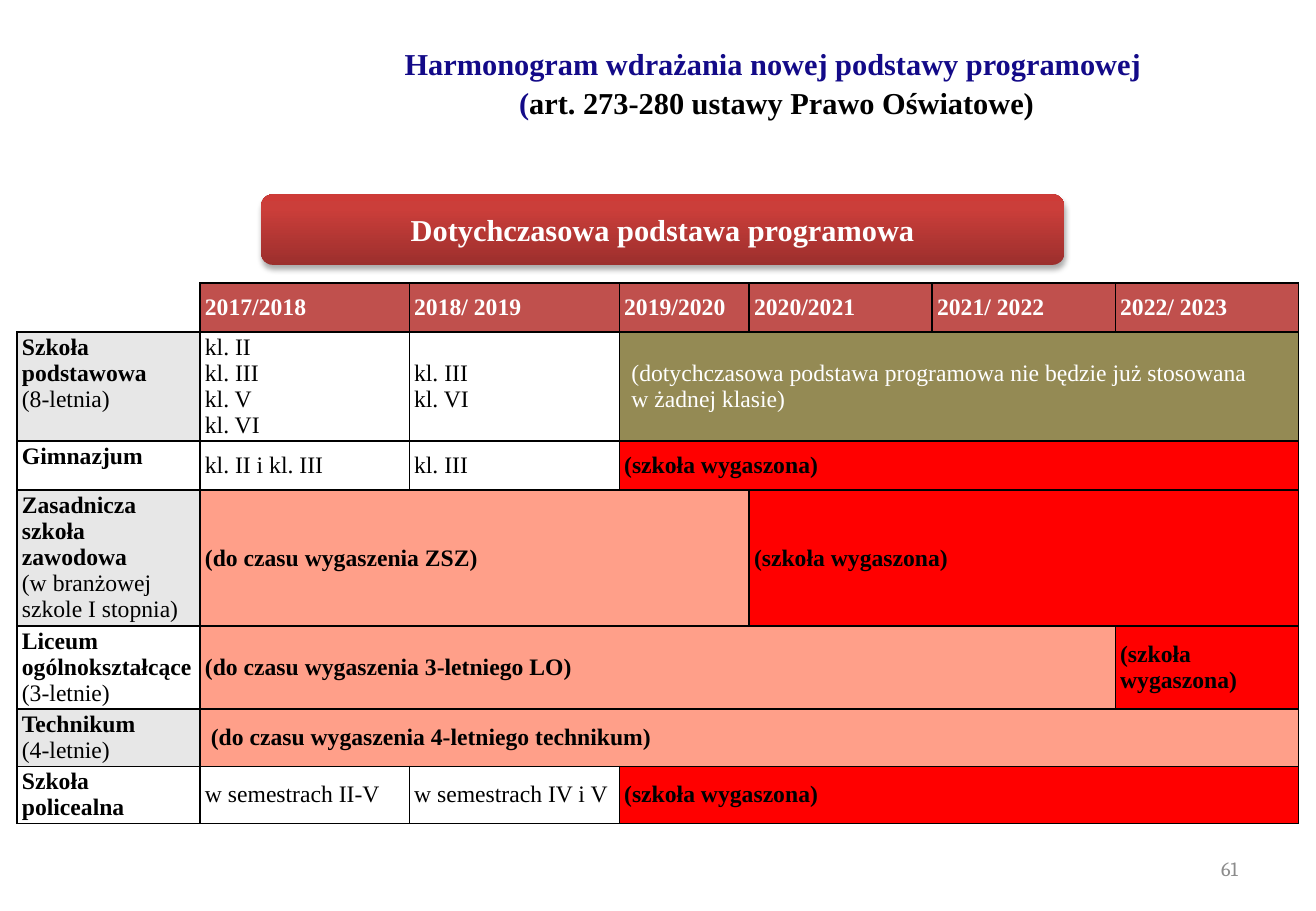
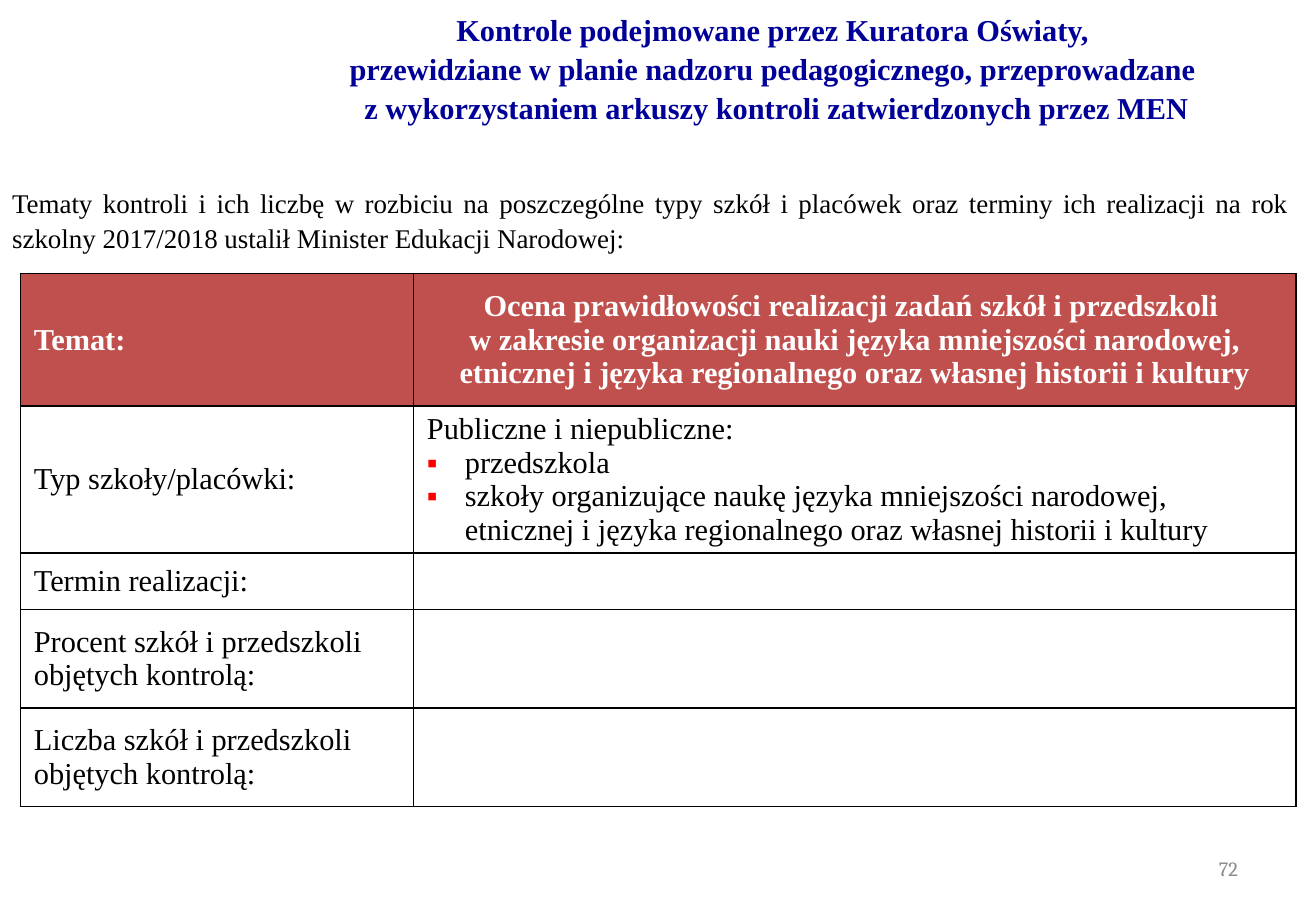
from copy import deepcopy
from dataclasses import dataclass

from lxml.etree import SubElement
from pptx import Presentation
from pptx.dml.color import RGBColor
from pptx.enum.shapes import MSO_SHAPE
from pptx.enum.text import MSO_ANCHOR, MSO_AUTO_SIZE, PP_ALIGN
from pptx.oxml.ns import qn
from pptx.util import Pt

# Shared palette and fonts
SERIF, NUMBER_FONT = "Times New Roman", "Cambria"
BLACK, WHITE, GREY = "000000", "FFFFFF", "8C8C8C"
HEADER, LABEL, OLIVE = "C0504D", "E7E7E7", "948A54"
CLOSED, PHASING_OUT = "FF0000", "FF9F89"


def rgb(value):
    return RGBColor.from_string(value)


def add_xml(parent, tag, **attributes):
    return SubElement(parent, qn(tag), attributes)


@dataclass
class Cell:
    """One table cell; lines holds (text, bold) pairs, one per paragraph."""
    lines: tuple = ()
    fill: str = WHITE
    span: int = 1
    color: str = BLACK
    anchor: MSO_ANCHOR = MSO_ANCHOR.MIDDLE
    align: PP_ALIGN = PP_ALIGN.LEFT
    left: float = 0
    bullets_from: int = 99
    borders: str = "LRTB"


def plain(*texts, **options):
    return Cell(tuple((text, False) for text in texts), **options)


def strong(text, fill=WHITE, span=1, **options):
    return Cell(((text, True),), fill, span, **options)


def header(text, **options):
    return strong(text, HEADER, color=WHITE, **options)


def school(name, note=None, fill=WHITE):
    lines = ((name, True),) + (((note, False),) if note else ())
    return Cell(lines, fill, anchor=MSO_ANCHOR.TOP)


def closed(span=1):
    return strong("(szkoła wygaszona)", CLOSED, span)


class Deck:
    def __init__(self, width, height):
        self.prs = Presentation()
        self.prs.slide_width, self.prs.slide_height = Pt(width), Pt(height)
        self.slide = None

    def new_slide(self, layout, number):
        self.slide = self.prs.slides.add_slide(self.prs.slide_layouts[layout])
        self.page_number(number)

    def add_text(self, paragraph, text, size, color=BLACK, bold=False, font=SERIF):
        """Add text run by run, with a line break at each newline."""
        for index, part in enumerate(text.split("\n")):
            if index:
                paragraph.add_line_break()
                paragraph._p[-1].append(deepcopy(run._r.rPr))
            run = paragraph.add_run()
            run.text = part
            run.font.name, run.font.size, run.font.bold = font, Pt(size), bold
            run.font.color.rgb = rgb(color)

    def place(self, shape, left, top, width, height):
        shape.left, shape.top = Pt(left), Pt(top)
        shape.width, shape.height = Pt(width), Pt(height)
        frame = shape.text_frame
        frame.word_wrap = True
        frame.auto_size = MSO_AUTO_SIZE.NONE
        return frame

    def page_number(self, number):
        box = self.slide.shapes.add_textbox(0, 0, 0, 0)
        frame = self.place(box, 558.7, 500.4, 182.2, 28.8)
        frame.vertical_anchor = MSO_ANCHOR.MIDDLE
        paragraph = frame.paragraphs[0]
        paragraph.alignment = PP_ALIGN.RIGHT
        self.add_text(paragraph, number, 12, GREY, font=NUMBER_FONT)

    def title(self, runs, left, top, width):
        frame = self.place(self.slide.shapes.title, left, top, width, 73.4)
        frame.vertical_anchor = MSO_ANCHOR.MIDDLE
        paragraph = frame.paragraphs[0]
        paragraph.alignment = PP_ALIGN.CENTER
        paragraph.line_spacing = 1.08
        for text, color in runs:
            self.add_text(paragraph, text, 18, color, True)

    def body(self, text, left, top, width, height):
        frame = self.place(self.slide.placeholders[1], left, top, width, height)
        frame.vertical_anchor = MSO_ANCHOR.TOP
        paragraph = frame.paragraphs[0]
        properties = paragraph._p.get_or_add_pPr()
        properties.set("marL", "0")
        properties.set("indent", "0")
        add_xml(properties, "a:buNone")
        paragraph.alignment = PP_ALIGN.JUSTIFY
        paragraph.line_spacing = 1.07
        paragraph.space_before = Pt(0)
        self.add_text(paragraph, text, 16)

    def banner(self, text, left, top, width, height):
        shape = self.slide.shapes.add_shape(MSO_SHAPE.ROUNDED_RECTANGLE, 0, 0, 0, 0)
        frame = self.place(shape, left, top, width, height)
        shape.line.fill.background()
        # Gradient from dark at the bottom to light at the top
        shape.fill.gradient()
        shape.fill.gradient_angle = 90
        last = shape._element.spPr.findall(".//" + qn("a:gs"))[-1]
        last.addnext(deepcopy(last))
        stops = ((0, "9C2F2D"), (0.8, "CB3E3A"), (1, "CE3B37"))
        for stop, (position, color) in zip(shape.fill.gradient_stops, stops):
            stop.position = position
            stop.color.rgb = rgb(color)
        # Soft shadow below
        shape.shadow.inherit = False
        effects = shape._element.spPr.find(qn("a:effectLst"))
        shadow = add_xml(effects, "a:outerShdw", blurRad=str(Pt(3.5)), dist=str(Pt(2.2)),
                         dir="5400000", rotWithShape="0")
        tint = add_xml(shadow, "a:srgbClr", val=BLACK)
        add_xml(tint, "a:alpha", val="32000")
        frame.vertical_anchor = MSO_ANCHOR.MIDDLE
        frame.paragraphs[0].alignment = PP_ALIGN.CENTER
        self.add_text(frame.paragraphs[0], text, 18, WHITE, True)

    def bullet(self, paragraph):
        properties = paragraph._p.get_or_add_pPr()
        properties.set("marL", str(Pt(22.5)))
        properties.set("indent", str(Pt(-22.5)))
        add_xml(add_xml(properties, "a:buClr"), "a:srgbClr", val=CLOSED)
        add_xml(properties, "a:buFont", typeface=SERIF)
        add_xml(properties, "a:buChar", char="▪")

    def format_cell(self, target, cell, inset):
        properties = target._tc.get_or_add_tcPr()
        for side in cell.borders:
            line = add_xml(properties, "a:ln" + side, w=str(Pt(1)))
            add_xml(add_xml(line, "a:solidFill"), "a:srgbClr", val=BLACK)
        target.fill.solid()
        target.fill.fore_color.rgb = rgb(cell.fill)
        target.vertical_anchor = cell.anchor
        target.margin_left = Pt(cell.left or inset[0])
        target.margin_right = Pt(inset[0])
        target.margin_top = target.margin_bottom = Pt(inset[1])

    def table(self, left, top, columns, heights, rows, size, inset):
        table = self.slide.shapes.add_table(
            len(rows), len(columns), Pt(left), Pt(top),
            Pt(sum(columns)), Pt(sum(heights))).table
        table.first_row = table.horz_banding = False
        for column, width in zip(table.columns, columns):
            column.width = Pt(width)
        for row, height in zip(table.rows, heights):
            row.height = Pt(height)
        for row_index, row in enumerate(rows):
            start = 0
            for cell in row:
                end = start + cell.span
                for index in range(start, end):
                    self.format_cell(table.cell(row_index, index), cell, inset)
                first = table.cell(row_index, start)
                if cell.span > 1:
                    first.merge(table.cell(row_index, end - 1))
                frame = first.text_frame
                for index, (text, bold) in enumerate(cell.lines):
                    paragraph = frame.add_paragraph() if index else frame.paragraphs[0]
                    if index >= cell.bullets_from:
                        self.bullet(paragraph)
                    paragraph.alignment = cell.align
                    self.add_text(paragraph, text, size, cell.color, bold)
                start = end


def schedule_slide(deck):
    deck.new_slide(5, "61")
    deck.title([("Harmonogram wdrażania nowej podstawy programowej \n(", "130A88"),
                ("art. 273-280 ustawy Prawo Oświatowe)", BLACK)], 152.6, 11.5, 615.6)
    deck.banner("Dotychczasowa podstawa programowa", 154.8, 115.2, 476, 41.8)
    years = ("2017/2018", "2018/ 2019", "2019/2020", "2020/2021", "2021/ 2022", "2022/ 2023")
    rows = [
        [Cell(borders="RB")] + [header(year) for year in years],
        [school("Szkoła podstawowa", "(8-letnia)", LABEL),
         plain("kl. II", "kl. III", "kl. V", "kl. VI"),
         plain("kl. III", "kl. VI"),
         plain("(dotychczasowa podstawa programowa nie będzie już stosowana \nw żadnej klasie)",
               fill=OLIVE, span=4, color=WHITE, left=7.2)],
        [school("Gimnazjum"), plain("kl. II i kl. III"), plain("kl. III"), closed(4)],
        [school("Zasadnicza szkoła zawodowa", "(w branżowej szkole I stopnia)", LABEL),
         strong("(do czasu wygaszenia ZSZ)", PHASING_OUT, 3), closed(3)],
        [school("Liceum ogólnokształcące", "(3-letnie)"),
         strong("(do czasu wygaszenia 3-letniego LO)", PHASING_OUT, 5), closed()],
        [school("Technikum", "(4-letnie)", LABEL),
         strong("(do czasu wygaszenia 4-letniego technikum)", PHASING_OUT, 6, left=6.4)],
        [school("Szkoła policealna"), plain("w semestrach II-V"),
         plain("w semestrach IV i V"), closed(4)],
    ]
    deck.table(10.1, 167.8, [108.5, 124, 124.5, 77, 108.5, 108.5, 108.5],
               [29, 64.5, 29, 80.5, 49, 34, 34], rows, 14, (2.9, 1.4))


def inspection_slide(deck):
    deck.new_slide(1, "72")
    deck.title([("Kontrole podejmowane przez Kuratora Oświaty, \n"
                 "przewidziane w planie nadzoru pedagogicznego, przeprowadzane \n"
                 "z wykorzystaniem arkuszy kontroli zatwierdzonych przez MEN", "000099")],
               140.8, 2.9, 639)
    deck.body("Tematy kontroli i ich liczbę w rozbiciu na poszczególne typy szkół i placówek "
              "oraz terminy ich realizacji na rok szkolny 2017/2018 ustalił "
              "Minister Edukacji Narodowej:", 0, 105.8, 771, 337.7)
    rows = [
        [header("Temat:"),
         header("Ocena prawidłowości realizacji zadań szkół i przedszkoli \n"
                "w zakresie organizacji nauki języka mniejszości narodowej, "
                "etnicznej i języka regionalnego oraz własnej historii i kultury",
                align=PP_ALIGN.CENTER)],
        [plain("Typ szkoły/placówki:"),
         plain("Publiczne i niepubliczne:", "przedszkola",
               "szkoły organizujące naukę języka mniejszości narodowej, "
               "etnicznej i języka regionalnego oraz własnej historii i kultury",
               bullets_from=1)],
    ] + [[plain(label), Cell()] for label in (
        "Termin realizacji:",
        "Procent szkół i przedszkoli objętych kontrolą:",
        "Liczba szkół i przedszkoli objętych kontrolą:")]
    deck.table(12.2, 162, [233, 523], [78.8, 87, 33.6, 58.4, 58.4], rows, 18, (7.9, 3.6))


def main():
    deck = Deck(780, 540)
    schedule_slide(deck)
    inspection_slide(deck)
    deck.prs.save("out.pptx")


if __name__ == "__main__":
    main()
